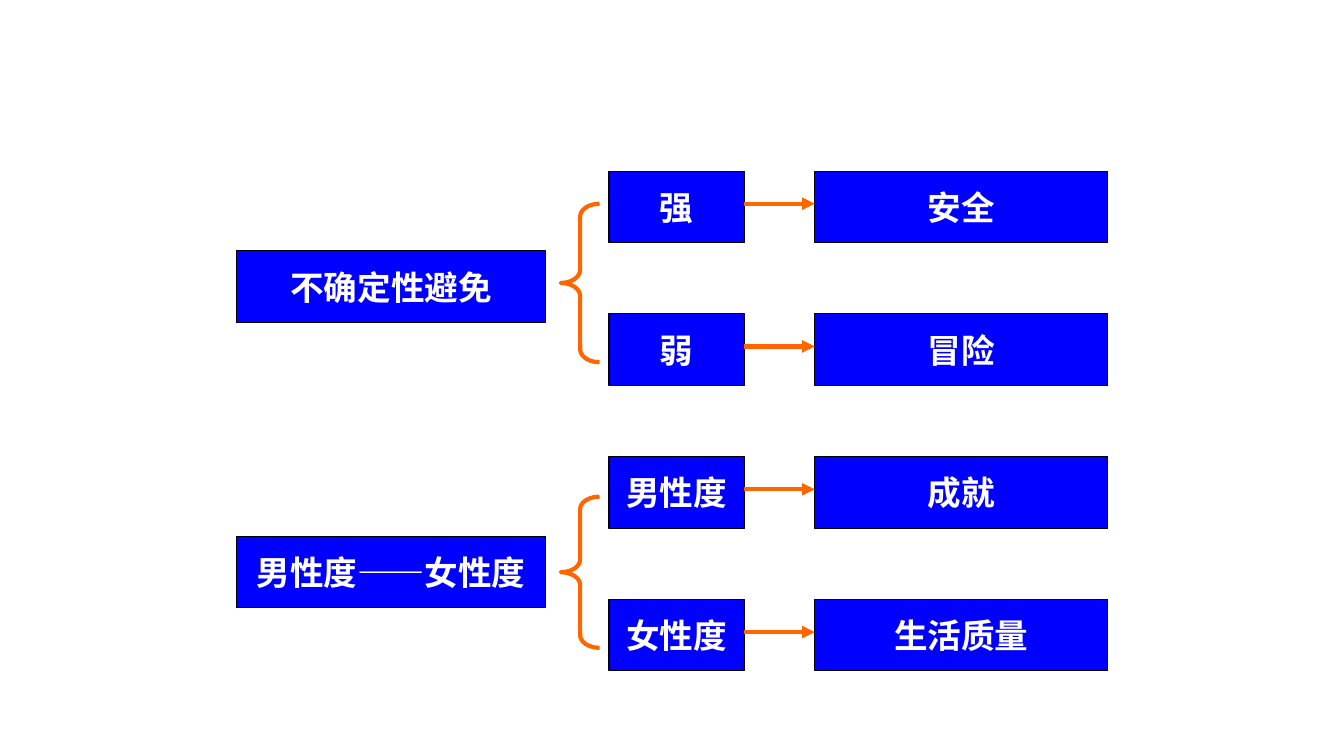
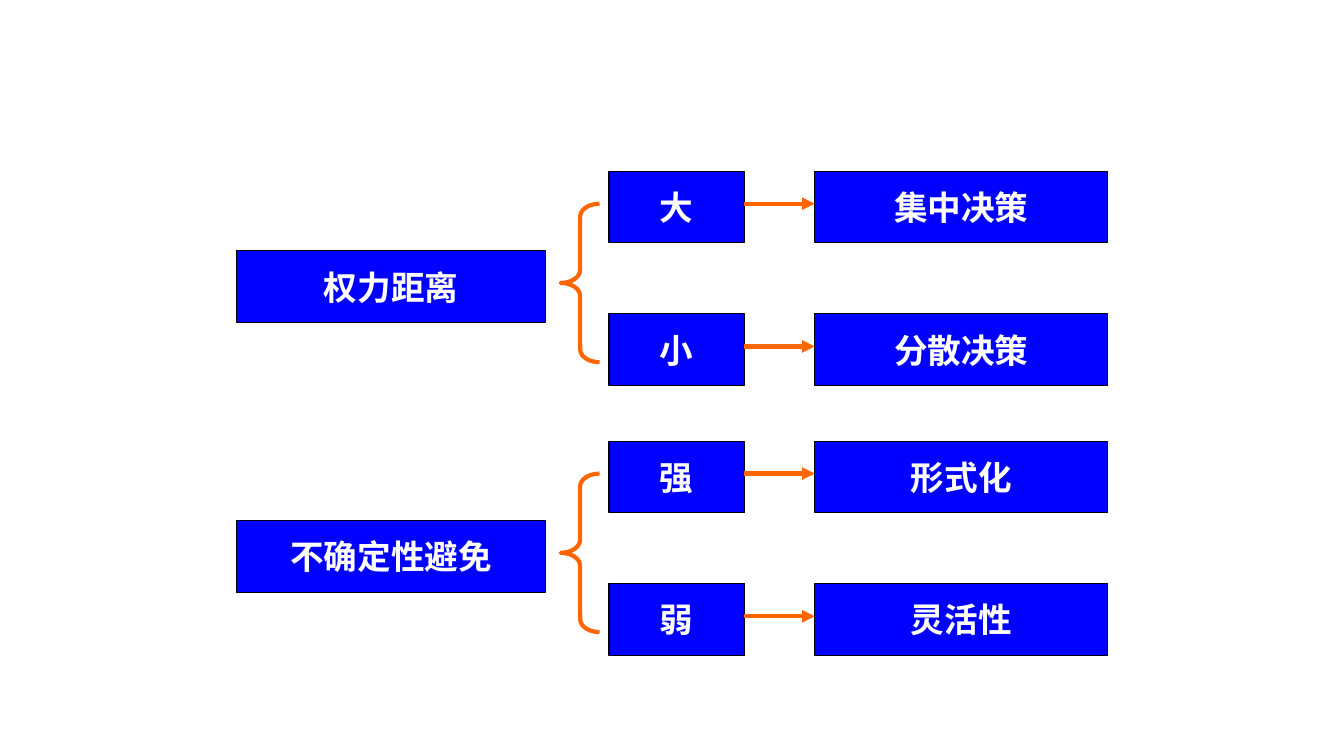
from dataclasses import dataclass

import pptx
import pptx.dml.color
import pptx.enum.shapes
import pptx.enum.text
import pptx.oxml
import pptx.oxml.ns
import pptx.shapes.autoshape
import pptx.slide
import pptx.util

EMU_PER_PX = 9525
SLIDE_WIDTH, SLIDE_HEIGHT = 1280, 720
BOX_HEIGHT = 68
BRANCH_STEP = 136
FACTOR_OFFSET = 76
ARROW_OFFSET = 31


@dataclass(frozen=True)
class Theme:
    box_fill: str = "0000FF"
    box_border: str = "000000"
    label_color: str = "FFFFFF"
    accent: str = "FF6600"
    font: str = "Arial"
    label_size: float = 24
    border_width: float = 0.75
    accent_width: float = 3


@dataclass(frozen=True)
class Column:
    left: int
    width: int

    @property
    def right(self) -> int:
        return self.left + self.width


@dataclass(frozen=True)
class Branch:
    level: str
    outcome: str


@dataclass(frozen=True)
class Dimension:
    factor: str
    top: int
    branches: tuple[Branch, ...]
    brace_offset: int = 31
    brace_height: int = 151
    brace_bend: float = 0.33


THEME = Theme()
FACTOR_COLUMN = Column(225, 295)
BRACE_COLUMN = Column(534, 37)
LEVEL_COLUMN = Column(580, 129)
OUTCOME_COLUMN = Column(776, 279)

SLIDES = (
    (
        Dimension("不确定性避免", 163, (Branch("强", "安全"), Branch("弱", "冒险"))),
        Dimension(
            "男性度——女性度",
            435,
            (Branch("男性度", "成就"), Branch("女性度", "生活质量")),
            brace_offset=38,
            brace_height=144,
            brace_bend=0.32,
        ),
    ),
    (
        Dimension("权力距离", 163, (Branch("大", "集中决策"), Branch("小", "分散决策"))),
        Dimension("不确定性避免", 420, (Branch("强", "形式化"), Branch("弱", "灵活性"))),
    ),
)


def px(length: int) -> pptx.util.Emu:
    return pptx.util.Emu(length * EMU_PER_PX)


def rgb(value: str) -> pptx.dml.color.RGBColor:
    return pptx.dml.color.RGBColor.from_string(value)


def add_outlined(
    slide: pptx.slide.Slide,
    kind: pptx.enum.shapes.MSO_SHAPE,
    column: Column,
    top: int,
    height: int,
    color: str,
    width: float,
) -> pptx.shapes.autoshape.Shape:
    outlined = slide.shapes.add_shape(
        kind, px(column.left), px(top), px(column.width), px(height)
    )
    outlined.shadow.inherit = False
    outlined.line.color.rgb = rgb(color)
    outlined.line.width = pptx.util.Pt(width)
    return outlined


def draw_box(slide: pptx.slide.Slide, column: Column, top: int, label: str) -> None:
    box = add_outlined(
        slide, pptx.enum.shapes.MSO_SHAPE.RECTANGLE, column, top, BOX_HEIGHT,
        THEME.box_border, THEME.border_width,
    )
    box.fill.solid()
    box.fill.fore_color.rgb = rgb(THEME.box_fill)
    frame = box.text_frame
    frame.text = label
    frame.word_wrap = False
    frame.vertical_anchor = pptx.enum.text.MSO_ANCHOR.MIDDLE
    paragraph = frame.paragraphs[0]
    paragraph.alignment = pptx.enum.text.PP_ALIGN.CENTER
    font = paragraph.runs[0].font
    font.name = THEME.font
    font.size = pptx.util.Pt(THEME.label_size)
    font.bold = True
    font.color.rgb = rgb(THEME.label_color)


def draw_brace(slide: pptx.slide.Slide, dimension: Dimension) -> None:
    brace = add_outlined(
        slide, pptx.enum.shapes.MSO_SHAPE.LEFT_BRACE, BRACE_COLUMN,
        dimension.top + dimension.brace_offset, dimension.brace_height,
        THEME.accent, THEME.accent_width,
    )
    brace.fill.background()
    brace.adjustments[0] = dimension.brace_bend
    brace.adjustments[1] = 0.5


def draw_arrow(slide: pptx.slide.Slide, y: int) -> None:
    arrow = slide.shapes.add_connector(
        pptx.enum.shapes.MSO_CONNECTOR.STRAIGHT,
        px(LEVEL_COLUMN.right), px(y), px(OUTCOME_COLUMN.left), px(y),
    )
    arrow.line.color.rgb = rgb(THEME.accent)
    arrow.line.width = pptx.util.Pt(THEME.accent_width)
    head = pptx.oxml.parse_xml(
        f'<a:tailEnd {pptx.oxml.ns.nsdecls("a")} type="triangle"/>'
    )
    arrow.line._get_or_add_ln().append(head)
    no_shadow = pptx.oxml.parse_xml(f'<a:effectLst {pptx.oxml.ns.nsdecls("a")}/>')
    arrow._element.spPr.append(no_shadow)


def draw_dimension(slide: pptx.slide.Slide, dimension: Dimension) -> None:
    draw_box(slide, FACTOR_COLUMN, dimension.top + FACTOR_OFFSET, dimension.factor)
    draw_brace(slide, dimension)
    for row, branch in enumerate(dimension.branches):
        top = dimension.top + row * BRANCH_STEP
        draw_box(slide, LEVEL_COLUMN, top, branch.level)
        draw_box(slide, OUTCOME_COLUMN, top, branch.outcome)
        draw_arrow(slide, top + ARROW_OFFSET)


def main() -> None:
    deck = pptx.Presentation()
    deck.slide_width = px(SLIDE_WIDTH)
    deck.slide_height = px(SLIDE_HEIGHT)
    blank_layout = deck.slide_layouts[6]
    for dimensions in SLIDES:
        slide = deck.slides.add_slide(blank_layout)
        for dimension in dimensions:
            draw_dimension(slide, dimension)
    deck.save("out.pptx")


if __name__ == "__main__":
    main()
